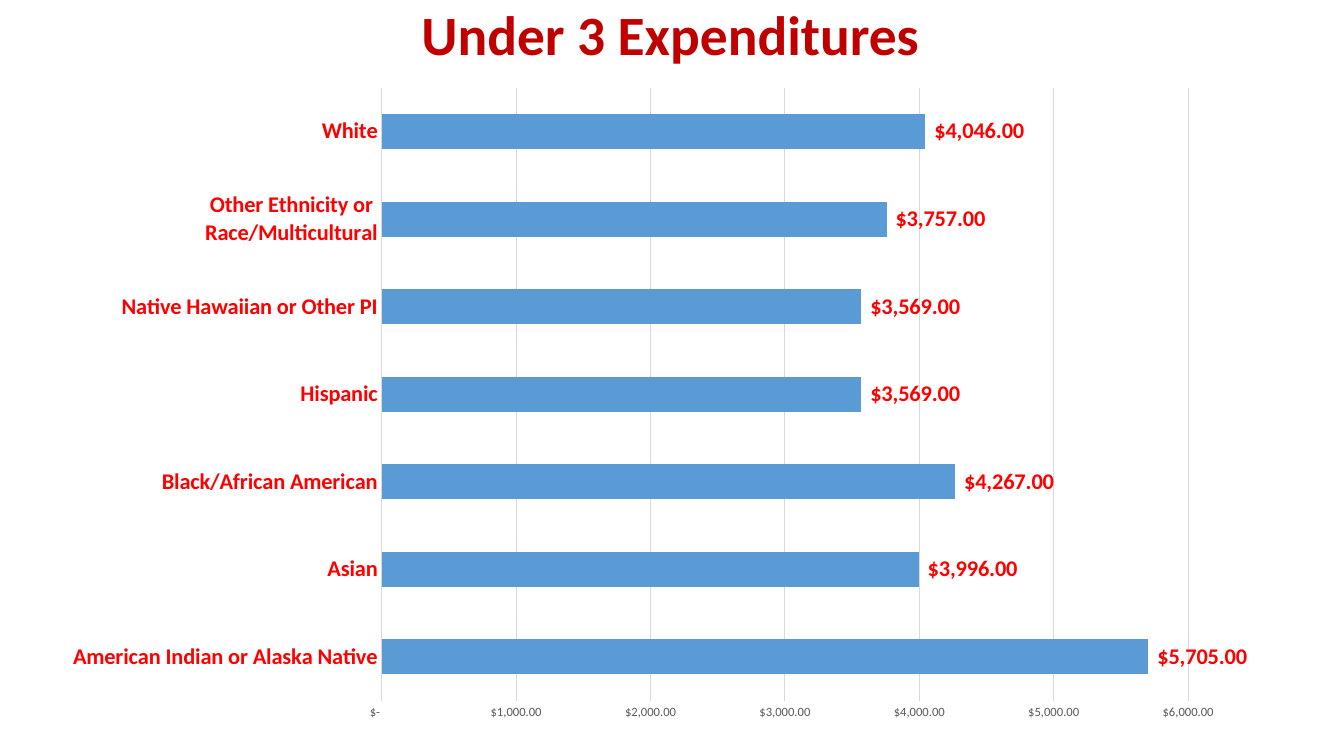
import pptx
import pptx.chart.data
import pptx.dml.color
import pptx.enum.chart
import pptx.enum.text
import pptx.util
from lxml import etree
from pptx.oxml import parse_xml
from pptx.util import Inches, Pt
from typing import NamedTuple

FONT = "Calibri"
DOLLARS = r'_("$"* #,##0.00_);_("$"* \(#,##0.00\);_("$"* "-"??_);_(@_)'


class Spending(NamedTuple):
    group: str
    amount: int


SPENDING = [
    Spending("American Indian or Alaska Native", 5705),
    Spending("Asian", 3996),
    Spending("Black/African American", 4267),
    Spending("Hispanic", 3569),
    Spending("Native Hawaiian or Other PI", 3569),
    Spending("Other Ethnicity or Race/Multicultural", 3757),
    Spending("White", 4046),
]


def rgb(value: str) -> pptx.dml.color.RGBColor:
    return pptx.dml.color.RGBColor.from_string(value)


def set_font(font, size: float, color: str, bold: bool = False) -> None:
    font.name = FONT
    font.size = Pt(size)
    font.bold = bold
    font.color.rgb = rgb(color)


def set_plot_layout(chart, x: float, y: float, w: float, h: float) -> None:
    """Fix the inner plot area, in fractions of the chart frame."""
    plot_area = chart.plots[0]._element.getparent()
    for old in plot_area.xpath("c:layout"):
        plot_area.remove(old)
    ns = "http://schemas.openxmlformats.org/drawingml/2006/chart"
    layout = parse_xml(f'<c:layout xmlns:c="{ns}"><c:manualLayout/></c:layout>')
    settings = {"layoutTarget": "inner", "xMode": "edge", "yMode": "edge",
                "x": x, "y": y, "w": w, "h": h}
    for name, value in settings.items():
        etree.SubElement(layout[0], f"{{{ns}}}{name}").set("val", str(value))
    plot_area.insert(0, layout)


def add_title(s) -> None:
    title = s.shapes.title
    title.left, title.top = Inches(0.9), Inches(0)
    title.width, title.height = Inches(11.5), Inches(0.74)
    tf = title.text_frame
    tf.text = "Under 3 Expenditures"
    tf.word_wrap = True
    tf.auto_size = pptx.enum.text.MSO_AUTO_SIZE.NONE
    tf.vertical_anchor = pptx.enum.text.MSO_ANCHOR.MIDDLE
    p = tf.paragraphs[0]
    p.alignment = pptx.enum.text.PP_ALIGN.CENTER
    p.line_spacing = 0.9
    set_font(p.font, 39.6, "C00000", True)


def add_spending_chart(s) -> None:
    data = pptx.chart.data.CategoryChartData(number_format=DOLLARS)
    data.categories = [row.group for row in SPENDING]
    data.add_series("Series 1", [row.amount for row in SPENDING])
    chart = s.shapes.add_chart(
        pptx.enum.chart.XL_CHART_TYPE.BAR_CLUSTERED,
        Inches(0.53), Inches(0.74), Inches(11.89), Inches(6.54), data).chart
    chart.has_legend = False
    chart.has_title = False
    set_font(chart.font, 10, "000000")
    set_plot_layout(chart, 0.274, 0.02, 0.673, 0.93)

    for axis in (chart.category_axis, chart.value_axis):
        axis.major_tick_mark = pptx.enum.chart.XL_TICK_MARK.NONE
        axis.minor_tick_mark = pptx.enum.chart.XL_TICK_MARK.NONE
        axis.format.line.fill.background()
    set_font(chart.category_axis.tick_labels.font, 16, "FF0000", True)

    amounts = chart.value_axis
    amounts.minimum_scale, amounts.maximum_scale = 0, 6000
    amounts.major_unit = 1000
    amounts.has_major_gridlines = True
    grid = amounts.major_gridlines.format.line
    grid.color.rgb = rgb("D9D9D9")
    grid.width = Pt(0.75)
    set_font(amounts.tick_labels.font, 9, "595959")

    plot = chart.plots[0]
    plot.gap_width = 150
    plot.vary_by_categories = False
    bars = plot.series[0]
    bars.format.fill.solid()
    bars.format.fill.fore_color.rgb = rgb("5B9BD5")
    labels = bars.data_labels
    labels.show_value = True
    labels.position = pptx.enum.chart.XL_LABEL_POSITION.OUTSIDE_END
    set_font(labels.font, 16, "FF0000", True)

    for numbers in (amounts.tick_labels, labels):
        numbers.number_format = DOLLARS
        numbers.number_format_is_linked = False


def main() -> None:
    prs = pptx.Presentation()
    prs.slide_width, prs.slide_height = Inches(13.33), Inches(7.5)
    s = prs.slides.add_slide(prs.slide_layouts[5])
    add_title(s)
    add_spending_chart(s)
    prs.save("out.pptx")


if __name__ == "__main__":
    main()
